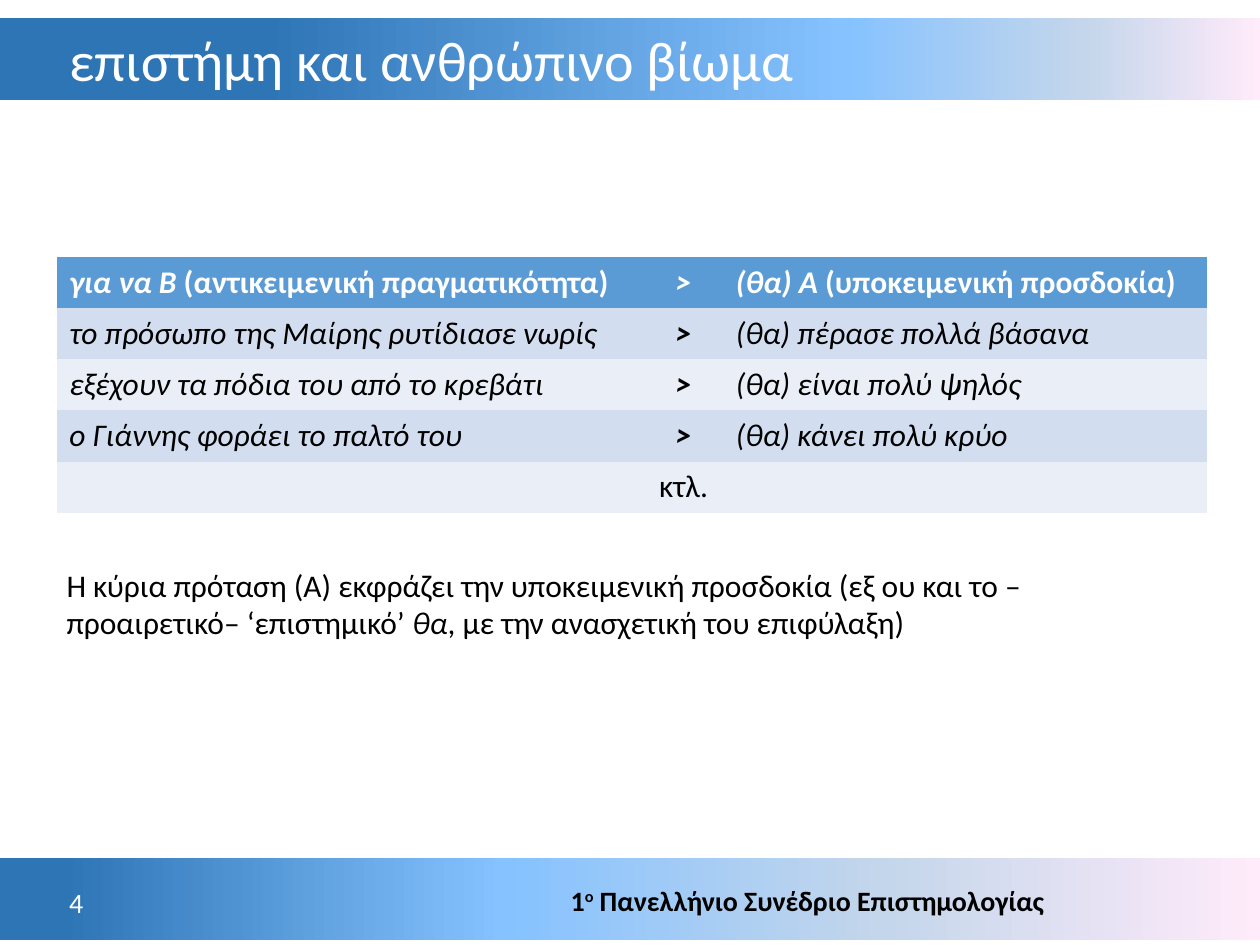
"""Build a slide with a three-column table of Greek example sentences."""
from lxml import etree
from pptx import Presentation
from pptx.dml.color import RGBColor
from pptx.enum.shapes import MSO_SHAPE
from pptx.enum.text import MSO_ANCHOR, MSO_AUTO_SIZE, PP_ALIGN
from pptx.oxml.ns import qn
from pptx.util import Inches, Pt

RECTANGLE = MSO_SHAPE.RECTANGLE
MIDDLE, TOP = MSO_ANCHOR.MIDDLE, MSO_ANCHOR.TOP
LEFT, CENTER, RIGHT = PP_ALIGN.LEFT, PP_ALIGN.CENTER, PP_ALIGN.RIGHT
NO_AUTOFIT = MSO_AUTO_SIZE.NONE
WHITE, BLACK = "FFFFFF", "000000"
BAND_COLORS = ["2E75B6", "85C2FF", "C4D6EB", "FFEBFA"]
HEADER_FILL = "5B9BD5"
BODY_FILLS = ["D2DEEF", "EAEFF7"]
NO_STYLE_NO_GRID = "{2D5ABB26-0587-4C30-8999-92F81FD0307C}"


def rgb(color):
    return RGBColor.from_string(color)


def add_runs(paragraph, runs, size, color, alignment=LEFT):
    paragraph.alignment = alignment
    for text, style in runs:
        run = paragraph.add_run()
        run.text = text
        run.font.name = "Calibri"
        run.font.size = Pt(size)
        run.font.color.rgb = rgb(color)
        run.font.bold = "b" in style
        run.font.italic = "i" in style
        if "^" in style:
            run.font._element.set("baseline", "30000")


presentation = Presentation()
presentation.slide_width, presentation.slide_height = Inches(10), Inches(7.5)
slide = presentation.slides.add_slide(presentation.slide_layouts[5])

bands = [(6.81, [5, 40, 70, 100]), (0.14, [21, 67, 86, 100])]
for index, (top, positions) in enumerate(bands):
    band = slide.shapes.add_shape(RECTANGLE, 0, Inches(top), Inches(10), Inches(0.65))
    band.shadow.inherit = False
    band.line.fill.background()
    band.fill.gradient()
    band.fill.gradient_angle = 0
    stops = band.element.spPr.find(".//" + qn("a:gsLst"))
    for stop in list(stops):
        stops.remove(stop)
    for position, color in zip(positions, BAND_COLORS):
        stop = etree.SubElement(stops, qn("a:gs"), pos=str(position * 1000))
        etree.SubElement(stop, qn("a:srgbClr"), val=color)
    slide.shapes.element.insert(2 + index, band.element)

title = slide.shapes.title
title.left, title.top = Inches(0.45), Inches(0.17)
title.width, title.height = Inches(8.87), Inches(0.67)
title.text_frame.vertical_anchor = MIDDLE
title.text_frame.auto_size = NO_AUTOFIT
title_paragraph = title.text_frame.paragraphs[0]
title_paragraph.line_spacing = 0.9
add_runs(title_paragraph, [("επιστήμη και ανθρώπινο βίωμα", "")], 32, WHITE)

text_boxes = [
    ((1.13, 6.93, 7.26, 0.43), MIDDLE, RIGHT, 16, BLACK,
     [("1", "b"), ("ο", "b^"), (" Πανελλήνιο Συνέδριο Επιστημολογίας", "b")]),
    ((0.45, 6.95, 0.47, 0.43), MIDDLE, LEFT, 16, WHITE, [("4", "")]),
    ((0.43, 4.44, 9.13, 0.71), TOP, LEFT, 18, BLACK,
     [("Η κύρια πρόταση (Α) εκφράζει την υποκειμενική προσδοκία (εξ ου και το "
       "–προαιρετικό– ‘επιστημικό’ ", ""),
      ("θα", "i"),
      (", με την ανασχετική του επιφύλαξη)", "")]),
]
for box, anchor, alignment, size, color, runs in text_boxes:
    text_box = slide.shapes.add_textbox(*map(Inches, box))
    text_box.text_frame.word_wrap = True
    text_box.text_frame.vertical_anchor = anchor
    add_runs(text_box.text_frame.paragraphs[0], runs, size, color, alignment)

examples = [
    ("το πρόσωπο της Μαίρης ρυτίδιασε νωρίς", "(θα) πέρασε πολλά βάσανα"),
    ("εξέχουν τα πόδια του από το κρεβάτι", "(θα) είναι πολύ ψηλός"),
    ("ο Γιάννης φοράει το παλτό του", "(θα) κάνει πολύ κρύο"),
]
rows = [
    [[("για να B ", "bi"), ("(αντικειμενική πραγματικότητα)", "b")],
     [(">", "bi")],
     [("(θα) A ", "bi"), ("(υποκειμενική προσδοκία)", "b")]],
    *[[[(reality, "i")], [(">", "bi")], [(expectation, "i")]]
      for reality, expectation in examples],
    [[], [("κτλ.", "")], []],
]
table_frame = slide.shapes.add_table(
    len(rows), 3, Inches(0.45), Inches(2.04), Inches(9.14), Inches(2.03))
table = table_frame.table
table_frame.element.find(".//" + qn("a:tableStyleId")).text = NO_STYLE_NO_GRID
for column, width in zip(table.columns, [4.66, 0.63, 3.84]):
    column.width = Inches(width)
for row_index, row in enumerate(rows):
    fill = BODY_FILLS[(row_index - 1) % 2] if row_index else HEADER_FILL
    color = BLACK if row_index else WHITE
    for column_index, runs in enumerate(row):
        cell = table.cell(row_index, column_index)
        cell.fill.solid()
        cell.fill.fore_color.rgb = rgb(fill)
        alignment = CENTER if column_index == 1 else LEFT
        add_runs(cell.text_frame.paragraphs[0], runs, 18, color, alignment)

presentation.save("out.pptx")
